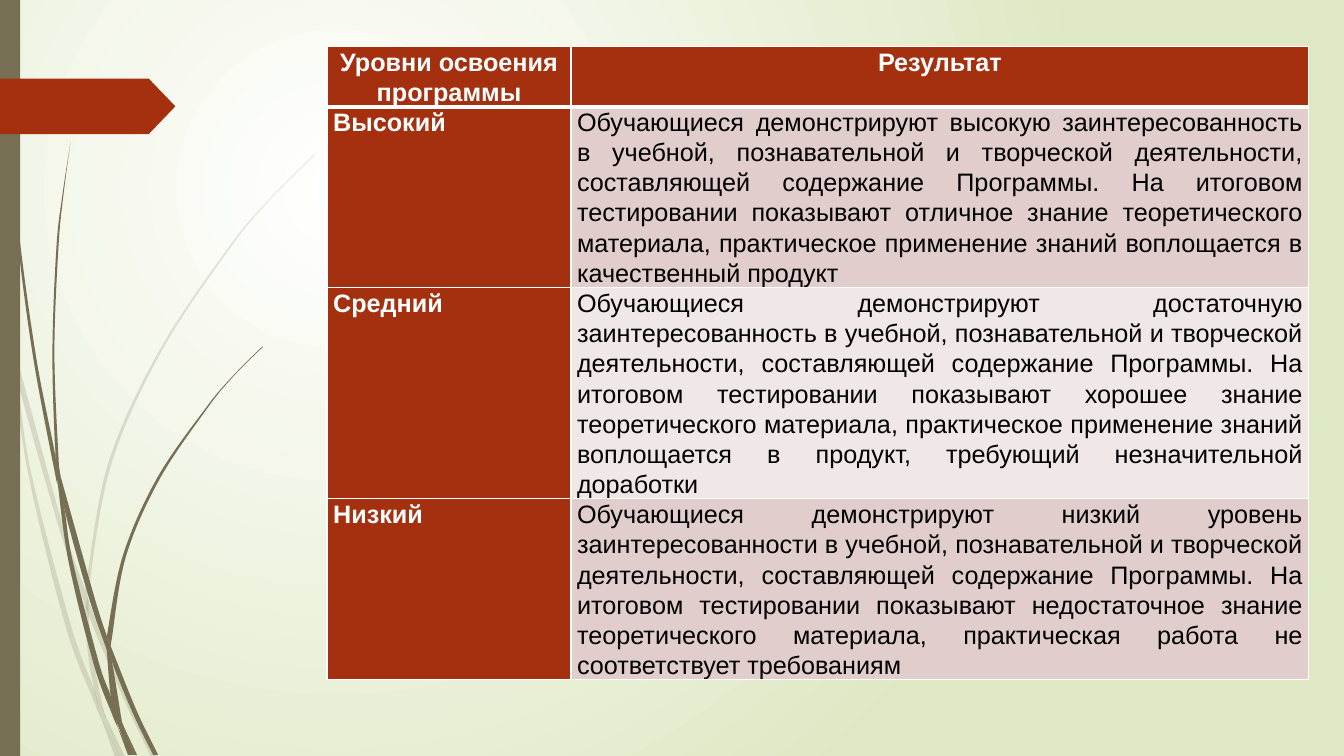
from dataclasses import dataclass

from lxml.etree import SubElement
from pptx import Presentation
from pptx.dml.color import RGBColor
from pptx.enum.shapes import MSO_SHAPE
from pptx.enum.text import PP_ALIGN
from pptx.oxml.ns import qn
from pptx.util import Emu, Inches, Pt


@dataclass(frozen=True)
class Theme:
    font: str = "Arial"
    size: int = 18
    line_spacing: float = 1.07
    white: str = "FFFFFF"
    black: str = "000000"
    backdrop: str = "DFE8C4"
    grass: str = "766F54"
    accent: str = "A53010"
    bands: tuple = ("E1CDCC", "F0E8E7")


THEME = Theme()
MODULE = Inches(0.1)  # the slide is 133.33 by 75 modules
SLIDE_COLS, SLIDE_ROWS = 133.33, 75

# Each leaf is its left and its right edge, as (column, row) from the top down.
PALE_LEAVES = [
    ([(0, 29.9), (1, 34.4), (1.1, 35)], [(0, 28.2), (0.9, 32.2), (1.1, 35)]),
    ([(1.4, 34.5), (1.7, 37.6), (5.8, 52.2), (8.4, 59.9)],
     [(1.4, 34.5), (6.2, 52), (8.5, 58.6)]),
    ([(8.8, 59.6), (8.8, 61), (12.3, 69.4), (15, 75.1)],
     [(8.8, 59.6), (9.2, 60.7), (12.7, 69.2), (15.5, 75.1)]),
    ([(10.5, 71.1), (11.9, 75.1)], [(10.5, 71.1), (12.4, 75.1)]),
    ([(1.1, 35), (2.8, 47), (6.5, 62.1), (9.2, 69.3), (10.1, 71.4)],
     [(1.1, 35), (1.7, 37.6), (3.1, 46.9), (7, 61.9), (9.3, 68.3),
      (9.9, 70.7), (10.1, 71.4)]),
    ([(8.4, 59.9), (8.7, 64.6), (9.3, 68.3), (9.6, 69.2), (10.5, 71.1)],
     [(8.4, 59.9), (8.8, 61), (9.1, 64.6), (10.3, 70.6), (10.5, 71.1)]),
    ([(31.2, 15.3), (26.8, 19.7), (22.8, 24.4), (15.8, 34.8), (10.7, 46.1),
      (8.5, 58.4), (8.5, 58.6)],
     [(31.2, 15.4), (26.8, 19.8), (22.9, 24.5), (16, 34.9), (11, 46.2),
      (8.8, 58.4), (8.8, 59.6)]),
    ([(10.1, 71.4), (11.4, 75.1)], [(10.1, 71.4), (11.9, 75.1)]),
    ([(8.5, 58.6), (8.4, 59.9)], [(8.8, 59.6), (8.8, 61)]),
    ([(9.3, 68.3), (9.9, 70.7), (10.1, 71.4), (11.9, 75.1)],
     [(9.3, 68.3), (9.6, 69.2), (10.5, 71.1), (11.9, 75.1)]),
]
DARK_LEAVES = [
    ([(0.3, 0), (0.4, 4.8), (0.7, 11), (1.7, 23.3), (3.3, 35.5), (5.6, 47.7)],
     [(0.4, 0), (0.5, 4.8), (0.8, 10.9), (1.9, 23.2), (3.6, 35.5),
      (5.5, 45.3), (5.7, 48.1)]),
    ([(6, 47.2), (6.4, 50.5), (8.8, 59.2), (10.6, 64.5)],
     [(6, 47.2), (9.3, 59), (10.6, 63.1)]),
    ([(11, 64.1), (11.1, 65.6), (13.2, 70.8), (15.2, 74.9)],
     [(11, 64.1), (11.3, 64.9), (13.6, 70.6), (15.7, 74.9)]),
    ([(5.7, 47.7), (6.8, 55.7), (9.3, 65.9), (11.1, 70.8), (11.7, 72.2)],
     [(5.7, 47.7), (6.4, 50.5), (7.2, 55.6), (9.8, 65.7), (11, 69.1),
      (11.7, 72.2)]),
    ([(7, 14.1), (6.2, 19.3), (5.6, 24.5), (5.2, 34.9), (5.5, 44.9),
      (6, 47.2)],
     [(7, 14.1), (6.3, 19.3), (5.8, 24.5), (5.4, 34.9), (5.8, 45.3),
      (6, 47.2)]),
    ([(12.2, 71.9), (13.3, 74.9)], [(12.2, 71.9), (13.6, 74.9)]),
    ([(5.5, 44.9), (5.5, 45.3), (5.7, 47.7), (6.4, 50.5)],
     [(5.5, 44.9), (6, 47.2), (6.4, 50.5)]),
    ([(26, 34.4), (23.1, 37.3), (20.4, 40.5), (15.6, 47.4), (12.2, 55.1),
      (10.6, 63.1)],
     [(26.1, 34.4), (23.1, 37.4), (20.5, 40.6), (15.8, 47.6), (12.5, 55.2),
      (11.1, 63.3), (11, 64.1)]),
    ([(11.7, 72.2), (12.7, 74.9)], [(11.7, 72.2), (13.1, 74.9)]),
    ([(10.6, 64.5), (11, 69.1), (11.6, 70.6), (12.2, 71.9)],
     [(10.6, 64.5), (11.1, 65.6), (12.1, 71.6), (12.2, 71.9)]),
    ([(10.6, 63.1), (10.6, 64.5)], [(11, 64.1), (11.1, 65.6)]),
    ([(11, 69.1), (11.6, 71.7), (13, 74.9)],
     [(11, 69.1), (12.2, 71.9), (13.3, 74.9)]),
]

TABLE_AT, TABLE_HEIGHT = (32.45, 4.6), 67.4
TABLE_COLS = (24.2, 73.2)
TABLE_ROWS = (4.3, 10.7, 9.9, 9.6)
LEVELS = [
    ("Уровни освоения программы", "Результат"),
    ("Высокий",
     "Обучающиеся демонстрируют высокую заинтересованность в учебной, "
     "познавательной и творческой деятельности, составляющей содержание "
     "Программы. На итоговом тестировании показывают отличное знание "
     "теоретического материала, практическое применение знаний воплощается "
     "в качественный продукт"),
    ("Средний",
     "Обучающиеся демонстрируют достаточную заинтересованность в учебной, "
     "познавательной и творческой деятельности, составляющей содержание "
     "Программы. На итоговом тестировании показывают хорошее знание "
     "теоретического материала, практическое применение знаний воплощается "
     "в продукт, требующий незначительной доработки"),
    ("Низкий",
     "Обучающиеся демонстрируют низкий уровень заинтересованности в учебной, "
     "познавательной и творческой деятельности, составляющей содержание "
     "Программы. На итоговом тестировании показывают недостаточное знание "
     "теоретического материала, практическая работа не соответствует "
     "требованиям"),
]


def grid(*modules):
    return [Emu(round(m * MODULE)) for m in modules]


def set_backdrop(slide):
    fill = slide.background.fill
    fill.gradient()
    for stop, color in zip(fill.gradient_stops, (THEME.white, THEME.backdrop)):
        stop.color.rgb = RGBColor.from_string(color)
    lin = slide.background._cSld.find(".//" + qn("a:lin"))
    grad = lin.getparent()
    grad.remove(lin)
    circle = SubElement(grad, qn("a:path"), {"path": "circle"})
    SubElement(circle, qn("a:fillToRect"),
               {"l": "50000", "t": "50000", "r": "100000", "b": "100000"})


def paint(sp, color, opacity=100):
    sp.shadow.inherit = False
    sp.line.fill.background()
    sp.fill.solid()
    sp.fill.fore_color.rgb = RGBColor.from_string(color)
    if opacity < 100:
        clr = sp.fill._xPr.find(".//" + qn("a:srgbClr"))
        SubElement(clr, qn("a:alpha"), {"val": str(opacity * 1000)})


def bend_edges(sp, split):
    """Turn the straight steps on either side of point `split` into curves."""
    outline = sp._element.find(".//" + qn("a:path"))
    pts = [(int(pt.get("x")), int(pt.get("y"))) for pt in outline.iter(qn("a:pt"))]
    steps = outline.findall(qn("a:lnTo"))
    for edge in (range(split), range(split, len(pts))):
        for i in edge[1:]:
            a, b, c, d = (pts[min(max(k, edge[0]), edge[-1])]
                          for k in range(i - 2, i + 2))
            step = steps[i - 1]
            step.clear()
            step.tag = qn("a:cubicBezTo")
            leave = [q + (r - p) / 6 for p, q, r in zip(a, b, c)]
            arrive = [q - (r - p) / 6 for p, q, r in zip(b, c, d)]
            for x, y in (leave, arrive, c):
                SubElement(step, qn("a:pt"), {"x": str(round(x)), "y": str(round(y))})


def add_leaf(slide, left, right, opacity):
    start, *rest = [grid(*knot) for knot in left + right[::-1]]
    builder = slide.shapes.build_freeform(*start)
    builder.add_line_segments(rest, close=True)
    sp = builder.convert_to_shape()
    bend_edges(sp, len(left))
    paint(sp, THEME.grass, opacity)


def set_borders(cell, top, bottom):
    props = cell._tc.get_or_add_tcPr()
    for side, width in zip("LRTB", (1, 1, top, bottom)):
        ln = SubElement(props, qn(f"a:ln{side}"), {"w": str(Pt(width))})
        solid = SubElement(ln, qn("a:solidFill"))
        SubElement(solid, qn("a:srgbClr"), {"val": THEME.white})


def fill_cell(cell, text, row, col):
    is_label = row == 0 or col == 0
    set_borders(cell, 3 if row == 1 else 1, 3 if row == 0 else 1)
    cell.fill.solid()
    cell.fill.fore_color.rgb = RGBColor.from_string(
        THEME.accent if is_label else THEME.bands[(row - 1) % 2])
    cell.margin_left, cell.margin_right = grid(0.6, 0.6)
    cell.margin_top = cell.margin_bottom = 0
    cell.text_frame.text = text
    p = cell.text_frame.paragraphs[0]
    p.alignment = PP_ALIGN.JUSTIFY if row else PP_ALIGN.CENTER
    p.line_spacing = THEME.line_spacing
    font = p.runs[0].font
    font.name, font.size, font.bold = THEME.font, Pt(THEME.size), is_label
    font.color.rgb = RGBColor.from_string(THEME.white if is_label else THEME.black)


def add_levels_table(slide):
    box = grid(*TABLE_AT, sum(TABLE_COLS), TABLE_HEIGHT)
    frame = slide.shapes.add_table(len(TABLE_ROWS), len(TABLE_COLS), *box)
    table = frame.table
    for column, width in zip(table.columns, grid(*TABLE_COLS)):
        column.width = width
    for row, height in zip(table.rows, grid(*TABLE_ROWS)):
        row.height = height
    frame.height = box[-1]
    for i, texts in enumerate(LEVELS):
        for j, text in enumerate(texts):
            fill_cell(table.cell(i, j), text, i, j)


def main():
    prs = Presentation()
    prs.slide_width, prs.slide_height = grid(SLIDE_COLS, SLIDE_ROWS)
    slide = prs.slides.add_slide(prs.slide_layouts[6])
    set_backdrop(slide)
    for leaves, opacity in ((PALE_LEAVES, 20), (DARK_LEAVES, 100)):
        for left, right in leaves:
            add_leaf(slide, left, right, opacity)
    add_shape = slide.shapes.add_shape
    paint(add_shape(MSO_SHAPE.RECTANGLE, *grid(0, 0, 2, SLIDE_ROWS)), THEME.grass)
    flag = add_shape(MSO_SHAPE.PENTAGON, *grid(0, 7.8, 17.4, 5.5))
    flag.adjustments[0] = 0.48
    paint(flag, THEME.accent)
    add_levels_table(slide)
    prs.save("out.pptx")


if __name__ == "__main__":
    main()
